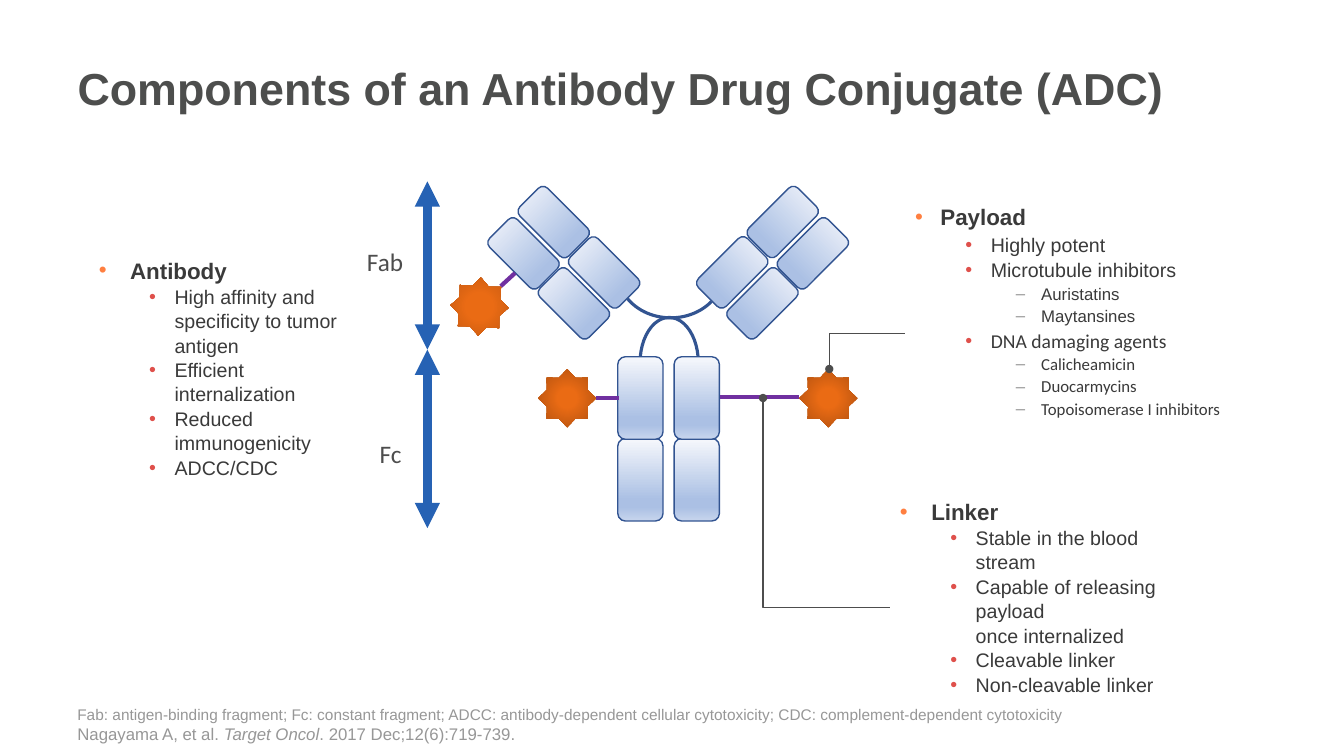
from pptx import Presentation
from pptx.dml.color import RGBColor
from pptx.enum.shapes import MSO_CONNECTOR, MSO_SHAPE
from pptx.enum.text import MSO_ANCHOR, MSO_AUTO_SIZE, PP_ALIGN
from pptx.oxml import parse_xml
from pptx.oxml.ns import nsdecls, qn
from pptx.util import Cm, Pt

STRAIGHT, ELBOW = MSO_CONNECTOR.STRAIGHT, MSO_CONNECTOR.ELBOW
OVAL, RECTANGLE = MSO_SHAPE.OVAL, MSO_SHAPE.RECTANGLE
ROUNDED, STAR = MSO_SHAPE.ROUNDED_RECTANGLE, MSO_SHAPE.STAR_8_POINT

COLORS = {
    "title": "4D4E4D", "label": "4D4D4D", "body": "3A3A3A", "footnote": "979797",
    "outline": "325491", "mask": "FFFFFF", "linker": "7030A0", "arrow": "2662B4",
}
BULLETS = [("•", "FF7F40"), ("•", "DF504B"), ("–", "949494")]
BULLET_SIZES = [16, 14, 12]
DOMAIN_STOPS = [(0, "F6F8FC"), (74, "ABC0E4"), (83, "ABC0E4"), (100, "C7D5ED")]
PAYLOAD_STOPS = [(0, "EA6B14"), (23, "EA6B14"), (69, "C55A11"), (97, "B85410")]
LINEAR = '<a:lin ang="5400000" scaled="0"/>'
RADIAL = '<a:path path="circle"><a:fillToRect l="50000" t="50000" r="50000" b="50000"/></a:path>'

presentation = Presentation()
presentation.slide_width, presentation.slide_height = Cm(33.87), Cm(19.05)
slide = presentation.slides.add_slide(presentation.slide_layouts[5])
shapes = slide.shapes


def add_figure(kind, box, fill=None, line_width=0, rotation=0, direction=LINEAR):
    """Add a shape with a solid fill, a list of gradient stops or no fill."""
    shape = shapes.add_shape(kind, *[Cm(length) for length in box])
    shape.shadow.inherit = False
    shape.rotation = rotation
    if fill is None:
        shape.fill.background()
    elif isinstance(fill, str):
        shape.fill.solid()
        shape.fill.fore_color.rgb = RGBColor.from_string(fill)
    else:
        shape.fill.gradient()
        stops = "".join(f'<a:gs pos="{position * 1000}"><a:srgbClr val="{color}"/></a:gs>'
                        for position, color in fill)
        properties = shape._element.spPr
        properties.replace(properties.find(qn("a:gradFill")), parse_xml(
            f'<a:gradFill {nsdecls("a")} rotWithShape="1"><a:gsLst>{stops}</a:gsLst>'
            f'{direction}</a:gradFill>'))
    if line_width:
        shape.line.width = Pt(line_width)
        shape.line.color.rgb = RGBColor.from_string(COLORS["outline"])
    else:
        shape.line.fill.background()


def add_line(kind, ends, color, width, heads=()):
    """Add a connector; heads lists (end tag, arrowhead type) pairs."""
    connector = shapes.add_connector(kind, *[Cm(length) for length in ends])
    connector.line.width = Pt(width)
    connector.line.color.rgb = RGBColor.from_string(COLORS[color])
    line = connector.line._get_or_add_ln()
    for tag, head in heads:
        line.append(parse_xml(f'<a:{tag} {nsdecls("a")} type="{head}"/>'))
    connector._element.spPr.append(parse_xml(f'<a:effectLst {nsdecls("a")}/>'))
    return connector


# Title
title = shapes.title
title.left, title.top, title.width, title.height = Cm(1.7), Cm(0.56), Cm(29.85), Cm(3.3)
title.text_frame.auto_size = MSO_AUTO_SIZE.NONE
title.text_frame.vertical_anchor = MSO_ANCHOR.MIDDLE
paragraph = title.text_frame.paragraphs[0]
paragraph.alignment = PP_ALIGN.LEFT
run = paragraph.add_run()
run.text = "Components of an Antibody Drug Conjugate (ADC)"
run.font.name, run.font.size, run.font.bold = "Arial", Pt(32), True
run.font.color.rgb = RGBColor.from_string(COLORS["title"])

# Hinge: two rings, partly masked
add_figure(OVAL, (16.13, 8, 1.47, 2.29), line_width=2.25)
add_figure(OVAL, (15.57, 5.72, 2.67, 2.29), line_width=2.25)
add_figure(RECTANGLE, (15.57, 5.61, 2.67, 1.02), COLORS["mask"])
add_figure(RECTANGLE, (16.46, 10.01, 0.81, 0.58), COLORS["mask"])

# Fc domains
for top in (11.05, 8.99):
    for left in (15.57, 16.99):
        add_figure(ROUNDED, (left, top, 1.14, 2.08), DOMAIN_STOPS, 1)

# Fab arms, mirrored about the hinge
MIRROR_SUM = 32.69
for left, top in ((19.23, 4.72), (18.72, 6.77), (19.99, 5.51), (17.96, 5.99)):
    add_figure(ROUNDED, (left, top, 0.99, 1.75), DOMAIN_STOPS, 1, 45)
    add_figure(ROUNDED, (MIRROR_SUM - left, top, 0.99, 1.75), DOMAIN_STOPS, 1, 315)

# Payload stars and their linkers
for left, top, rotation in ((20.14, 9.3, 0), (13.56, 9.3, 0), (11.35, 6.99, 317.8)):
    add_figure(STAR, (left, top, 1.47, 1.47), PAYLOAD_STOPS, 0, rotation, RADIAL)
for ends in ((18.14, 10.01, 20.14, 10.01), (15.01, 10.03, 15.6, 10.03),
             (12.62, 7.21, 12.98, 6.88)):
    add_line(STRAIGHT, ends, "linker", 3)

# Fab and Fc extents
for top, bottom in ((4.57, 8.81), (8.81, 13.31)):
    add_line(STRAIGHT, (10.77, top, 10.77, bottom), "arrow", 6,
             [("headEnd", "triangle"), ("tailEnd", "triangle")])
for text, left, top, width in (("Fab", 8.89, 6.07, 1.63), ("Fc", 9.17, 10.92, 1.35)):
    label = shapes.add_textbox(Cm(left), Cm(top), Cm(width), Cm(1.02))
    label.text_frame.word_wrap = True
    paragraph = label.text_frame.paragraphs[0]
    paragraph.alignment = PP_ALIGN.CENTER
    run = paragraph.add_run()
    run.text = text
    run.font.name, run.font.size = "Calibri", Pt(18)
    run.font.color.rgb = RGBColor.from_string(COLORS["label"])

# Leaders from payload and linker to their descriptions
for ends, turn in (((21.41, 7.9, 22.3, 9.81), {"rot": "5400000", "flipH": "1", "flipV": "1"}),
                   ((18.19, 11.07, 23.47, 14.27), {"rot": "16200000", "flipH": "1"})):
    leader = add_line(ELBOW, ends, "label", 1, [("headEnd", "oval")])
    properties = leader._element.spPr
    properties.find(qn("a:prstGeom")).set("prst", "bentConnector2")
    for name, value in turn.items():
        properties.find(qn("a:xfrm")).set(name, value)

# Component descriptions: box, heading indent, line spacing, (level, text, font) items
descriptions = [
    ((22.81, 4.93, 8.46, 6.96), 0.64, 1.1, [
        (0, "Payload", "Arial"), (1, "Highly potent", "Arial"),
        (1, "Microtubule inhibitors", "Arial"),
        (2, "Auristatins", "Arial"), (2, "Maytansines", "Arial"),
        (1, "DNA damaging agents", "Calibri"), (2, "Calicheamicin", "Calibri"),
        (2, "Duocarmycins", "Calibri"), (2, "Topoisomerase I inhibitors", "Calibri")]),
    ((22.43, 12.4, 7.32, 5.82), 0.79, 1.04, [
        (0, "Linker", "Arial"), (1, "Stable in the blood stream", "Arial"),
        (1, "Capable of releasing payload \nonce internalized", "Arial"),
        (1, "Cleavable linker", "Arial"), (1, "Non-cleavable linker", "Arial")]),
    ((2.24, 6.32, 6.93, 6.96), 0.79, 1.04, [
        (0, "Antibody", "Arial"),
        (1, "High affinity and specificity to tumor antigen", "Arial"),
        (1, "Efficient internalization", "Arial"),
        (1, "Reduced immunogenicity", "Arial"), (1, "ADCC/CDC", "Arial")]),
]
for box, heading_indent, spacing, items in descriptions:
    frame = shapes.add_textbox(*[Cm(length) for length in box]).text_frame
    frame.word_wrap = True
    for index, (level, text, font) in enumerate(items):
        paragraph = frame.add_paragraph() if index else frame.paragraphs[0]
        paragraph.level = level
        properties = paragraph._p.get_or_add_pPr()
        hanging = 0.64 if level else heading_indent
        properties.set("marL", str(Cm(hanging + 1.27 * level)))
        properties.set("indent", str(-Cm(hanging)))
        mark, mark_color = BULLETS[level]
        for bullet in (f'buClr {nsdecls("a")}><a:srgbClr val="{mark_color}"/></a:buClr>',
                       f'buFont {nsdecls("a")} typeface="Arial"/>',
                       f'buChar {nsdecls("a")} char="{mark}"/>'):
            properties.append(parse_xml("<a:" + bullet))
        paragraph.line_spacing = spacing
        for number, part in enumerate(text.split("\n")):
            if number:
                paragraph.add_line_break()
            run = paragraph.add_run()
            run.text = part
            run.font.name, run.font.size = font, Pt(BULLET_SIZES[level])
            run.font.bold = level == 0
            run.font.color.rgb = RGBColor.from_string(COLORS["body"])

# Footnote
frame = shapes.add_textbox(Cm(1.7), Cm(17.65), Cm(29.85), Cm(1.22)).text_frame
frame.word_wrap = True
frame.vertical_anchor = MSO_ANCHOR.BOTTOM
footnote = [
    [("Fab: antigen-binding fragment; Fc: constant fragment; ADCC: antibody-dependent "
      "cellular cytotoxicity; CDC: complement-dependent cytotoxicity", 11, False)],
    [("Nagayama A, et al. ", 12, False), ("Target Oncol", 12, True),
     (". 2017 Dec;12(6):719-739.", 12, False)],
]
for index, runs in enumerate(footnote):
    paragraph = frame.add_paragraph() if index else frame.paragraphs[0]
    for text, size, italic in runs:
        run = paragraph.add_run()
        run.text = text
        run.font.name, run.font.size, run.font.italic = "Arial", Pt(size), italic
        run.font.color.rgb = RGBColor.from_string(COLORS["footnote"])

presentation.save("out.pptx")
